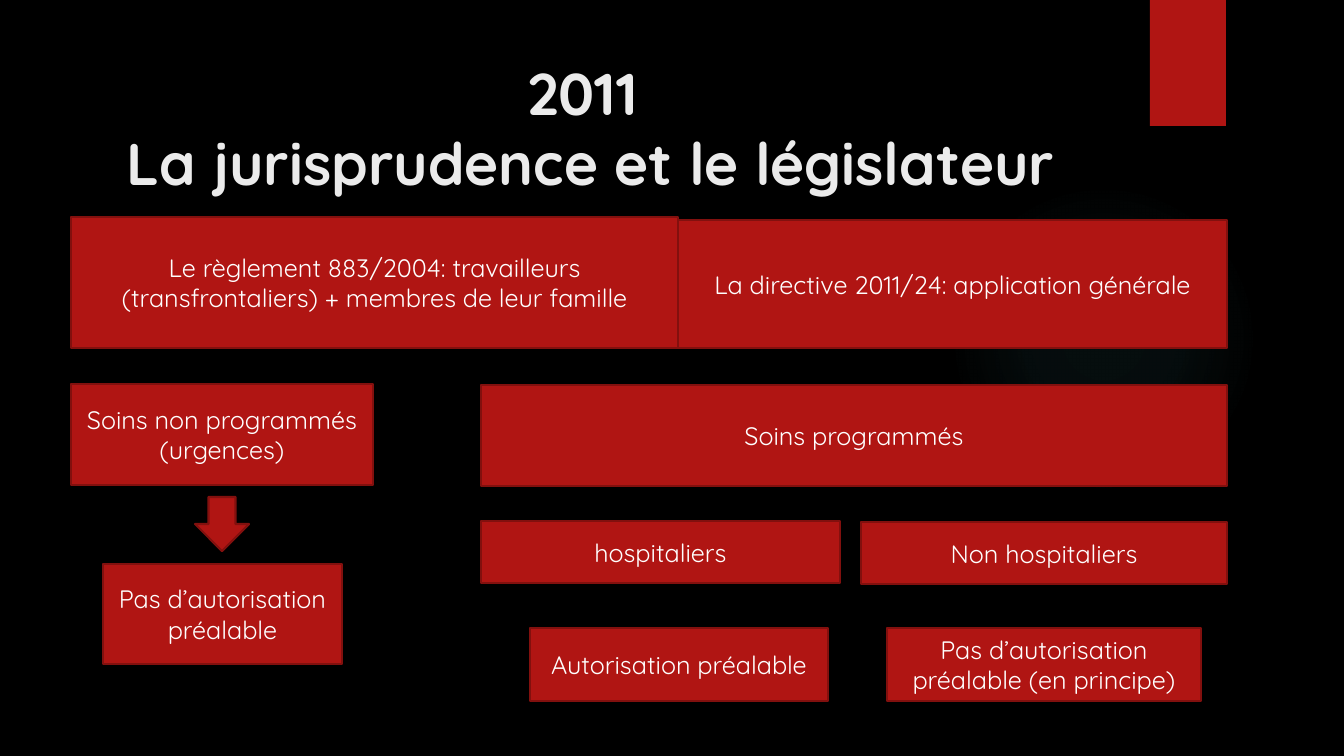
import pptx
import pptx.util
from lxml import etree
from pptx.dml.color import RGBColor
from pptx.enum.shapes import MSO_SHAPE
from pptx.enum.text import MSO_ANCHOR, PP_ALIGN
from pptx.oxml import parse_xml

PX = 914400 / 100.8
FONT = "Quicksand"
BLACK = RGBColor(0x00, 0x00, 0x00)
RED = RGBColor(0xB0, 0x15, 0x13)
DARK_RED = RGBColor(0x82, 0x10, 0x0E)
WHITE = RGBColor(0xFF, 0xFF, 0xFF)
OFF_WHITE = RGBColor(0xEB, 0xEB, 0xEB)
GLOW = RGBColor(0x50, 0xB9, 0xC1)

presentation = pptx.Presentation()
presentation.slide_width = pptx.util.Emu(round(1344 * PX))
presentation.slide_height = pptx.util.Emu(round(756 * PX))
slide = presentation.slides.add_slide(presentation.slide_layouts[6])
slide.background.fill.solid()
slide.background.fill.fore_color.rgb = BLACK


def add_shape(preset, left, top, width, height, outlined=True):
    box = [pptx.util.Emu(round(length * PX)) for length in (left, top, width, height)]
    shape = slide.shapes.add_shape(preset, *box)
    shape.shadow.inherit = False
    shape.fill.solid()
    shape.fill.fore_color.rgb = RED
    if outlined:
        shape.line.color.rgb = DARK_RED
        shape.line.width = pptx.util.Pt(1.5)
    else:
        shape.line.fill.background()
    return shape


def write_text(shape, text, size, color, bold=False):
    text_frame = shape.text_frame
    text_frame.word_wrap = True
    text_frame.vertical_anchor = MSO_ANCHOR.MIDDLE
    text_frame.text = text
    paragraph = text_frame.paragraphs[0]
    paragraph.alignment = PP_ALIGN.CENTER
    for run in paragraph.runs:
        run.font.name = FONT
        run.font.size = pptx.util.Pt(size)
        run.font.bold = bold
        run.font.color.rgb = color


# Faint round glow: (position, opacity) in percent
glow = add_shape(MSO_SHAPE.OVAL, 949, 184, 310, 310, outlined=False)
stops = "".join(
    f'<a:gs pos="{position * 1000}"><a:srgbClr val="{GLOW}">'
    f'<a:alpha val="{opacity * 1000}"/></a:srgbClr></a:gs>'
    for position, opacity in ((0, 7), (36, 6), (69, 0))
)
gradient = parse_xml(
    '<a:gradFill xmlns:a="http://schemas.openxmlformats.org/drawingml/2006/main">'
    f'<a:gsLst>{stops}</a:gsLst><a:path path="circle">'
    '<a:fillToRect l="50000" t="50000" r="50000" b="50000"/></a:path></a:gradFill>'
)
properties = glow.fill._xPr
properties.replace(properties.find(pptx.oxml.ns.qn("a:solidFill")), gradient)

# Corner tab
add_shape(MSO_SHAPE.RECTANGLE, 1150, 0, 76, 126, outlined=False)

# Title
title_box = [pptx.util.Emu(round(length * PX)) for length in (72, 50, 1037, 154)]
title = slide.shapes.add_textbox(*title_box)
write_text(title, "2011 \vLa jurisprudence et le législateur", 42, OFF_WHITE, bold=True)

# Diagram boxes, from the legal texts down to the outcomes
boxes = [
    ("Le règlement 883/2004: travailleurs (transfrontaliers) + membres de leur famille",
     71, 217, 607, 131),
    ("La directive 2011/24: application générale", 678, 220, 549, 128),
    ("Soins non programmés (urgences)", 71, 384, 302, 101),
    ("Soins programmés", 481, 385, 746, 101),
    ("hospitaliers", 481, 521, 359, 62),
    ("Non hospitaliers", 861, 522, 366, 62),
    ("Pas d’autorisation préalable", 103, 564, 239, 100),
    ("Autorisation préalable", 530, 628, 298, 73),
    ("Pas d’autorisation préalable (en principe)", 887, 628, 314, 73),
]
for text, *place in boxes:
    write_text(add_shape(MSO_SHAPE.RECTANGLE, *place), text, 18, WHITE)

# Arrow from unplanned care to its outcome
add_shape(MSO_SHAPE.DOWN_ARROW, 195, 497, 54, 54)

presentation.save("out.pptx")
